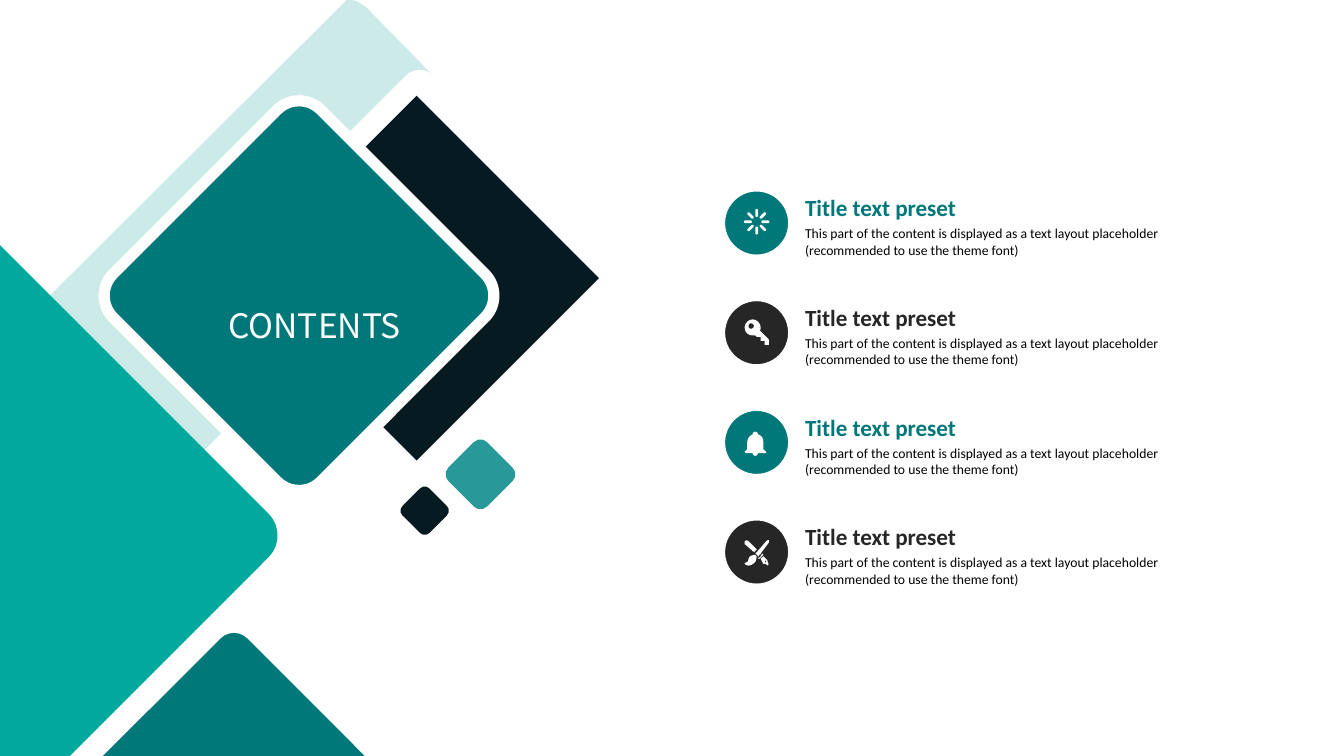
import math

from pptx import Presentation
from pptx import util as u
from pptx.dml.color import RGBColor
from pptx.enum import shapes, text

CELL = u.Inches(0.01)  # the slide is a grid of 1000 columns by 562.5 rows
COLORS = {
    "teal": "007779", "bright": "01A89E", "soft": "299899", "pale": "CCEAE7",
    "navy": "061A21", "charcoal": "262626", "black": "000000", "white": "FFFFFF",
}
BLURB = ("This part of the content is displayed as a text layout placeholder "
         "(recommended to use the theme font)")

deck = Presentation()
deck.slide_width, deck.slide_height = 1000 * CELL, int(562.5 * CELL)
page = deck.slides.add_slide(deck.slide_layouts[6])


def place(kind, center, size, color, turn=0, radius=0, border=0, contours=()):
    """Add a preset shape around its center, or a freeform made of contours.

    A contour starts at a point; each later step is a point to draw a line to,
    or the six numbers of a cubic curve.
    """
    cx, cy = center
    if contours:
        builder = None
        for start, *steps in contours:
            points = [start]
            for step in steps:
                if len(step) == 2:
                    points.append(step)
                    continue
                nodes = [points[-1], step[:2], step[2:4], step[4:]]
                for t in (0.25, 0.5, 0.75, 1):
                    weights = [math.comb(3, n) * t**n * (1 - t)**(3 - n) for n in range(4)]
                    points.append([sum(w * node[axis] for w, node in zip(weights, nodes))
                                   for axis in (0, 1)])
            spots = [((cx + x) * CELL, (cy + y) * CELL) for x, y in points]
            if builder is None:
                builder = page.shapes.build_freeform(*spots[0], scale=1.0)
            else:
                builder.move_to(*spots[0])
            builder.add_line_segments(spots[1:], close=True)
        shape = builder.convert_to_shape()
    else:
        width, height = size
        shape = page.shapes.add_shape(
            kind, int((cx - width / 2) * CELL), int((cy - height / 2) * CELL),
            int(width * CELL), int(height * CELL))
        shape.rotation = turn
        if radius:
            shape.adjustments[0] = radius / min(size)
    shape.shadow.inherit = False
    shape.fill.solid()
    shape.fill.fore_color.rgb = RGBColor.from_string(COLORS[color])
    if border:
        shape.line.color.rgb = RGBColor.from_string(COLORS["white"])
        shape.line.width = u.Pt(border)
    else:
        shape.line.fill.background()


def write(words, left, top, width, height, size, color, font="Calibri",
          bold=None, wrap=False, anchor=text.MSO_ANCHOR.TOP):
    box = page.shapes.add_textbox(*(int(n * CELL) for n in (left, top, width, height)))
    frame = box.text_frame
    frame.margin_left = frame.margin_right = frame.margin_top = frame.margin_bottom = 0
    frame.word_wrap, frame.vertical_anchor = wrap, anchor
    span = frame.paragraphs[0].add_run()
    span.text = words
    span.font.name, span.font.size, span.font.bold = font, u.Pt(size), bold
    span.font.color.rgb = RGBColor.from_string(COLORS[color])


# Icons, in cells from the middle of their disc
KEY = [
    [(2, -2), (3, -2, 3, -3, 3, -4), (3, -7, 0, -10, -3, -10), (-6, -10, -9, -7, -9, -4),
     (-9, 0, -6, 2, -3, 2), (-1, 2), (0, 3), (3, 3), (3, 6), (6, 6), (6, 9), (9, 9), (9, 5)],
    [(-4, -3), (-6, -3, -6, -4, -6, -5), (-6, -6, -6, -7, -4, -7),
     (-3, -7, -2, -6, -2, -5), (-2, -4, -3, -3, -4, -3)],
]
BELL = [
    [(5, 5), (5, 0), (5, -3, 4, -5, 1, -6), (1, -7, 0, -8, -1, -8), (-2, -8, -3, -7, -3, -6),
     (-5, -5, -7, -3, -7, 0), (-7, 5), (-9, 7), (-8, 8), (-3, 8),
     (-3, 9, -2, 10, -1, 10), (0, 10, 1, 9, 1, 8), (7, 8), (7, 7)],
]
PEN_AND_BRUSH = [
    [(8, 6), (5, 3), (3, 5), (5, 9), (6, 8, 7, 9, 8, 10), (9, 9), (8, 8, 8, 6, 8, 6)],
    [(7, 7), (7, 8, 6, 8, 6, 7), (6, 6, 7, 6, 7, 7)],
    [(4, 1), (4, 2, 3, 2, 3, 3), (1, 5), (2, 5), (5, 2)],
    [(-2, 0), (0, -2), (-6, -8), (-7, -9, -8, -9, -9, -8), (-9, -8, -9, -7, -9, -6)],
    [(-1, 2), (-3, 2, -6, 3, -6, 5), (-6, 8, -9, 8, -9, 8), (-9, 8, -9, 10, -6, 10),
     (-4, 10, 0, 8, 0, 4), (0, 3, -1, 2, -1, 2)],
    [(3, 1), (9, -7), (9, -7, 9, -8, 9, -9), (9, -9, 8, -9, 7, -8), (1, -1), (-1, 1),
     (0, 2, 1, 2, 1, 4), (2, 2), (3, 2, 3, 1, 3, 1)],
]

# Contents list
ROUNDED = shapes.MSO_SHAPE.ROUNDED_RECTANGLE
for row, (color, icon) in enumerate([("teal", None), ("charcoal", KEY),
                                     ("teal", BELL), ("charcoal", PEN_AND_BRUSH)]):
    middle = (563, 166 + 81.6 * row)
    place(shapes.MSO_SHAPE.OVAL, middle, (50, 50), color, border=2.25)
    if icon:
        place(None, middle, None, "white", contours=icon)
    else:
        for turn in range(0, 360, 45):
            angle = math.radians(turn)
            spoke = (middle[0] + 6.5 * math.sin(angle), middle[1] - 1 - 6.5 * math.cos(angle))
            place(ROUNDED, spoke, (2, 6), "white", turn=turn, radius=1)
    write("Title text preset", 599, middle[1] - 20, 288, 17, 12.4, color,
          bold=True, anchor=text.MSO_ANCHOR.MIDDLE)
    write(BLURB, 599, middle[1] + 1.5, 288, 25, 7.3, "black", wrap=True)

# Diamond artwork
place(shapes.MSO_SHAPE.RECTANGLE, (310, 207), (192, 192), "navy", turn=45)
PALE_FRAME = [
    [(261, 0), (258, 0, 257, 0, 256, 2), (37, 220), (152, 335), (168, 319), (84, 235),
     (80, 231, 78, 226, 78, 220), (78, 214, 80, 208, 84, 204), (206, 81),
     (211, 77, 216, 75, 222, 75), (228, 75, 234, 77, 238, 81), (257, 101), (302, 56),
     (305, 53, 309, 52, 312, 52), (316, 52, 320, 53, 322, 56), (272, 5),
     (268, 2, 264, 0, 261, 0)],
]
place(None, (0, 0), None, "pale", contours=PALE_FRAME)
for center, reach, radius, color, border in [  # reach: middle to rounded tip
    ((-22, 398.5), 228.5, 23, "bright", 0),
    ((174, 606), 135, 14, "teal", 0),
    ((316, 380), 18, 5, "navy", 0),
    ((357.5, 353), 26, 7, "soft", 0),
    ((222.5, 220), 145, 23, "teal", 6),
]:
    side = math.sqrt(2) * (reach - radius) + 2 * radius
    place(ROUNDED, center, (side, side), color, turn=45, radius=radius, border=border)
write("CONTENTS", 170, 227, 160, 62, 18, "white", font="Noto Sans CJK SC", wrap=True)

deck.save("out.pptx")
